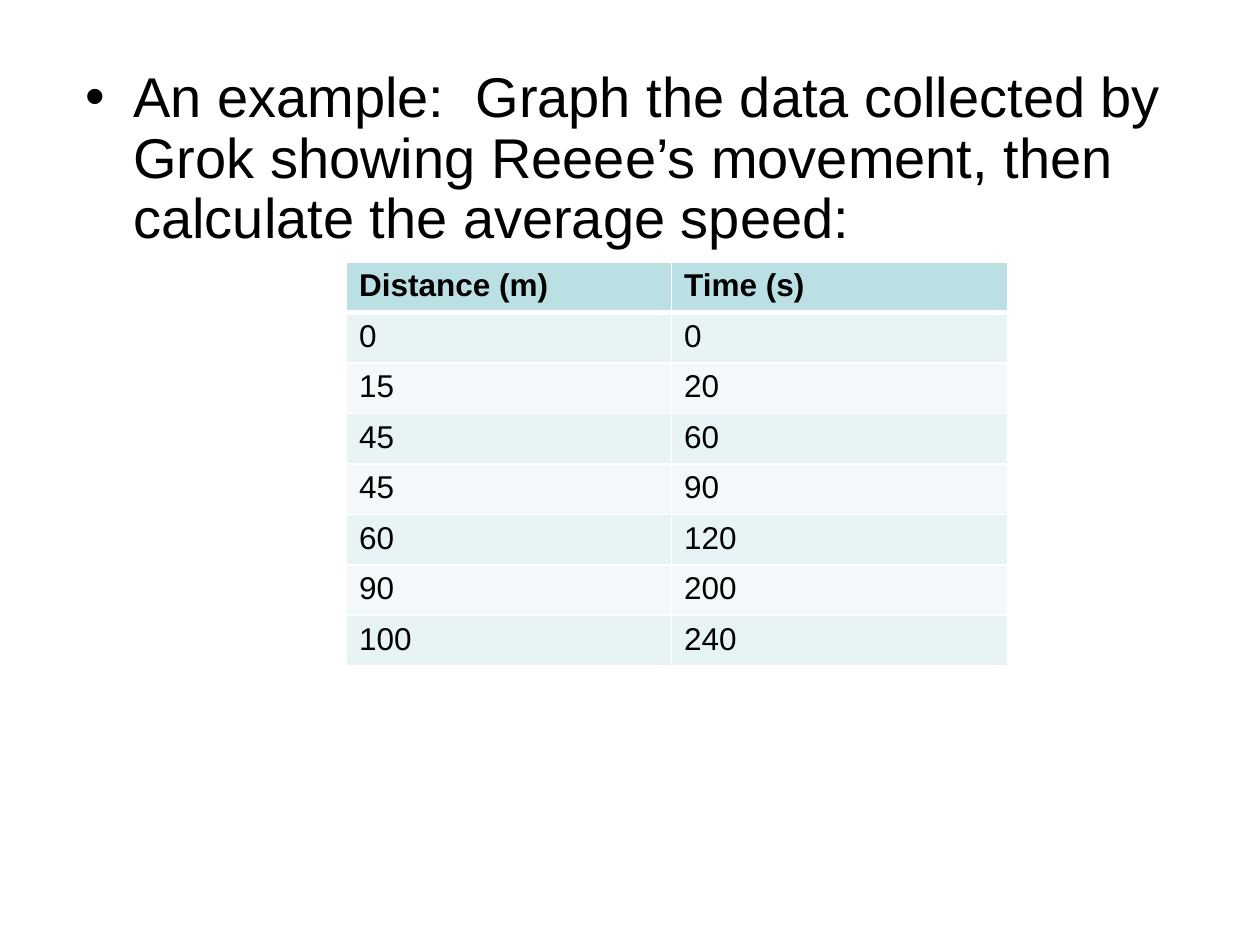
from lxml.etree import SubElement
from pptx import Presentation
from pptx.dml.color import RGBColor
from pptx.oxml.ns import qn
from pptx.util import Inches, Pt

TASK = ("An example:  Graph the data collected by Grok showing Reeee’s movement, "
        "then calculate the average speed:")
HEADER = ("Distance (m)", "Time (s)")
READINGS = [(0, 0), (15, 20), (45, 60), (45, 90), (60, 120), (90, 200), (100, 240)]
COLUMN_WIDTHS = (2.58, 2.67)
ROW_HEIGHT = 0.38
HEADER_FILL = "BBE0E3"
BAND_FILLS = ("E7F3F4", "F3F9FA")
BLACK, WHITE = "000000", "FFFFFF"


def color(value):
    return RGBColor.from_string(value)


def add_span(para, text, size, bold=False):
    span = para.add_run()
    span.text = text
    span.font.name = "Arial"
    span.font.size = Pt(size)
    span.font.bold = bold
    span.font.color.rgb = color(BLACK)


def add_bullet(para, indent):
    properties = para._p.get_or_add_pPr()
    properties.set("marL", str(Inches(indent)))
    properties.set("indent", str(-Inches(indent)))
    SubElement(properties, qn("a:buFont"), typeface="Arial")
    SubElement(properties, qn("a:buChar"), char="•")


def add_border(cell, side, width):
    line = SubElement(cell._tc.get_or_add_tcPr(), qn(f"a:ln{side}"), w=str(Pt(width)))
    fill = SubElement(line, qn("a:solidFill"))
    SubElement(fill, qn("a:srgbClr"), val=WHITE)


def add_task(page):
    box = page.shapes.add_textbox(Inches(0.58), Inches(0.5), Inches(9), Inches(4.12))
    box.text_frame.word_wrap = True
    para = box.text_frame.paragraphs[0]
    add_bullet(para, 0.38)
    para.line_spacing = 0.9
    add_span(para, TASK, 32)


def add_readings(page):
    rows = [HEADER, *READINGS]
    table = page.shapes.add_table(
        len(rows), len(HEADER), Inches(2.75), Inches(2.08),
        Inches(sum(COLUMN_WIDTHS)), Inches(ROW_HEIGHT * len(rows))).table
    for column, width in zip(table.columns, COLUMN_WIDTHS):
        column.width = Inches(width)
    for r, values in enumerate(rows):
        table.rows[r].height = Inches(ROW_HEIGHT)
        is_header = r == 0
        for c, value in enumerate(values):
            cell = table.cell(r, c)
            widths = {"L": 1, "R": 1, "T": 3 if r == 1 else 1, "B": 3 if is_header else 1}
            for side, width in widths.items():
                add_border(cell, side, width)
            cell.fill.solid()
            cell.fill.fore_color.rgb = color(HEADER_FILL if is_header else BAND_FILLS[(r - 1) % 2])
            add_span(cell.text_frame.paragraphs[0], str(value), 18, is_header)


def main():
    deck = Presentation()
    deck.slide_width, deck.slide_height = Inches(10), Inches(7.5)
    page = deck.slides.add_slide(deck.slide_layouts[6])
    page.background.fill.solid()
    page.background.fill.fore_color.rgb = color(WHITE)
    add_task(page)
    add_readings(page)
    deck.save("out.pptx")


if __name__ == "__main__":
    main()
